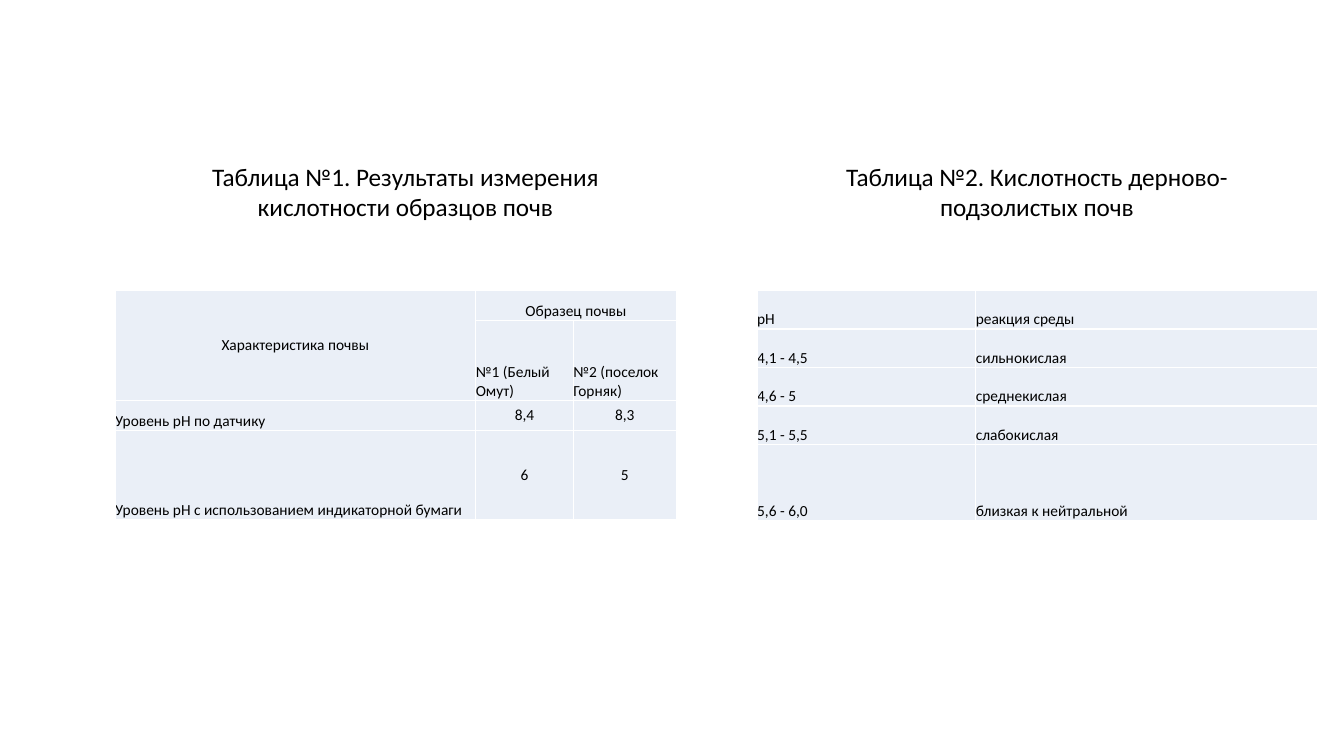
import pptx
import pptx.dml.color
import pptx.enum.text
import pptx.oxml
import pptx.oxml.ns
import pptx.util
from pptx.util import Cm

ALIGN = pptx.enum.text.PP_ALIGN
ANCHOR = pptx.enum.text.MSO_ANCHOR
BLACK, WHITE, PALE_BLUE = "000000", "FFFFFF", "EAEFF7"
TABLE_TOP = 7.32
TITLE_TOP = 3.94

SAMPLE_ROWS = [
    ["Характеристика почвы", "Образец почвы", ""],
    ["", "№1 (Белый Омут)", "№2 (поселок Горняк)"],
    ["Уровень pH по датчику", "8,4", "8,3"],
    ["Уровень pH с использованием индикаторной бумаги", "6", "5"],
]
ACIDITY_ROWS = [
    ["pH", "реакция среды"],
    ["4,1 - 4,5", "сильнокислая"],
    ["4,6 - 5", "среднекислая"],
    ["5,1 - 5,5", "слабокислая"],
    ["5,6 - 6,0", "близкая к нейтральной"],
]


def color(value):
    return pptx.dml.color.RGBColor.from_string(value)


def format_text(frame, size, align):
    for para in frame.paragraphs:
        para.alignment = align
        for span in para.runs:
            span.font.size = pptx.util.Pt(size)
            span.font.name = "Calibri"
            span.font.color.rgb = color(BLACK)


def add_title(page, text, left, width):
    box = page.shapes.add_textbox(Cm(left), Cm(TITLE_TOP), Cm(width), Cm(1.83))
    frame = box.text_frame
    frame.word_wrap = True
    frame.auto_size = pptx.enum.text.MSO_AUTO_SIZE.SHAPE_TO_FIT_TEXT
    frame.text = text
    format_text(frame, 18, ALIGN.CENTER)


def add_borders(cell):
    properties = cell._tc.get_or_add_tcPr()
    for side in ("lnL", "lnR", "lnT", "lnB"):
        properties.append(pptx.oxml.parse_xml(
            f'<a:{side} {pptx.oxml.ns.nsdecls("a")} w="12700"><a:solidFill>'
            f'<a:srgbClr val="{WHITE}"/></a:solidFill></a:{side}>'))


def fill_cell(cell, text):
    add_borders(cell)
    cell.fill.solid()
    cell.fill.fore_color.rgb = color(PALE_BLUE)
    cell.margin_left = cell.margin_right = 0
    cell.margin_top = cell.margin_bottom = 0
    cell.vertical_anchor = ANCHOR.BOTTOM
    if text:
        cell.text_frame.text = text
        format_text(cell.text_frame, 11, ALIGN.LEFT)


def center_cell(cell, anchor=ANCHOR.MIDDLE):
    cell.vertical_anchor = anchor
    cell.text_frame.paragraphs[0].alignment = ALIGN.CENTER


def add_grid(page, rows, left, widths, heights):
    frame = page.shapes.add_table(len(rows), len(widths), Cm(left), Cm(TABLE_TOP),
                                  Cm(sum(widths)), Cm(sum(heights)))
    table = frame.table
    table.first_row = False
    table.horz_banding = False
    for column, width in zip(table.columns, widths):
        column.width = Cm(width)
    for row, height, texts in zip(table.rows, heights, rows):
        row.height = Cm(height)
        for cell, text in zip(row.cells, texts):
            fill_cell(cell, text)
    return table


def add_sample_table(page):
    table = add_grid(page, SAMPLE_ROWS, 2.9, [9.09, 2.46, 2.59], [0.76, 2.01, 0.76, 2.24])
    table.cell(0, 0).merge(table.cell(1, 0))
    table.cell(0, 1).merge(table.cell(0, 2))
    center_cell(table.cell(0, 0))
    center_cell(table.cell(0, 1), ANCHOR.BOTTOM)
    for row in (2, 3):
        for column in (1, 2):
            center_cell(table.cell(row, column))


def main():
    deck = pptx.Presentation()
    deck.slide_width, deck.slide_height = Cm(33.87), Cm(19.05)
    page = deck.slides.add_slide(deck.slide_layouts[6])
    add_sample_table(page)
    add_title(page, "Таблица №1. Результаты измерения кислотности образцов почв", 3.91, 12.62)
    add_grid(page, ACIDITY_ROWS, 19.08, [5.51, 8.61], [0.97] * 4 + [1.93])
    add_title(page, "Таблица №2. Кислотность дерново-подзолистых почв", 20.37, 11.53)
    deck.save("out.pptx")


if __name__ == "__main__":
    main()
